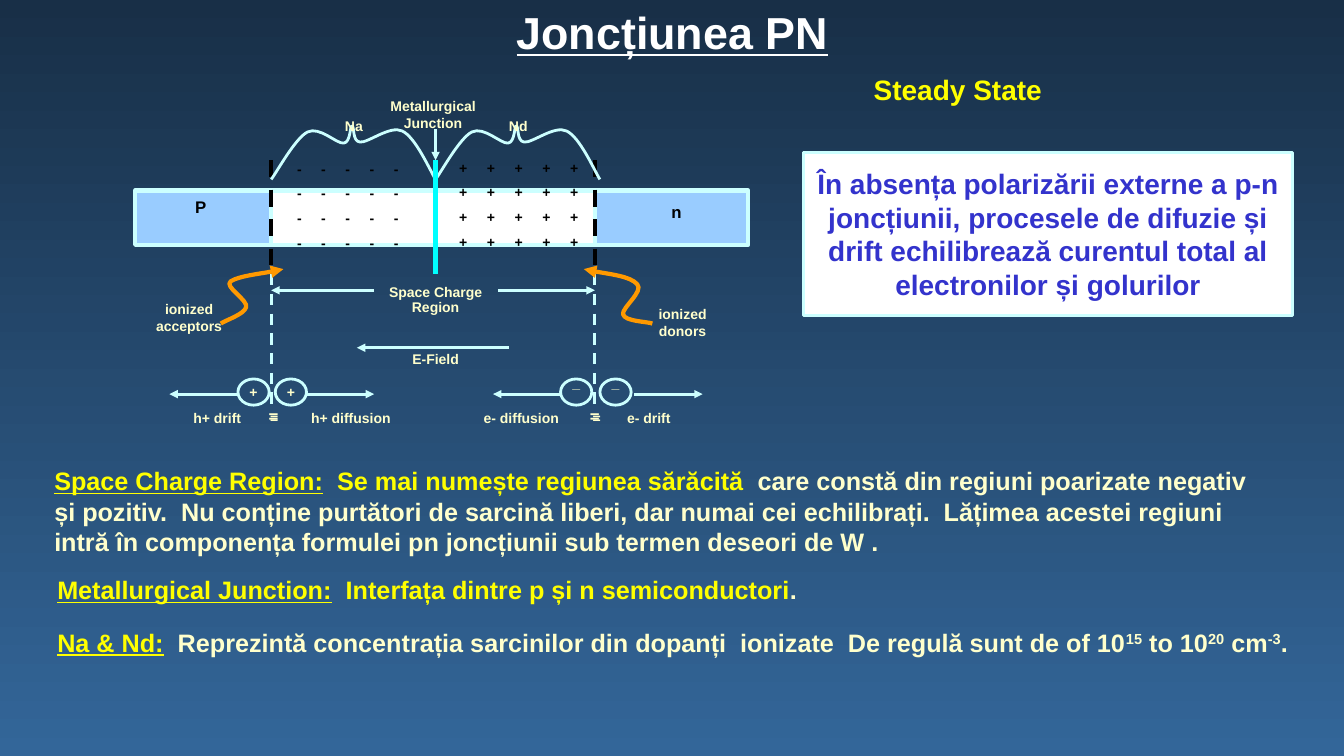
from dataclasses import dataclass

from lxml.etree import SubElement
from pptx import Presentation
from pptx.dml.color import RGBColor
from pptx.enum.dml import MSO_LINE
from pptx.enum.shapes import MSO_CONNECTOR, MSO_SHAPE
from pptx.enum.text import MSO_ANCHOR as Anchor, MSO_AUTO_SIZE, PP_ALIGN as Align
from pptx.oxml.ns import qn
from pptx.util import Emu, Pt


@dataclass(frozen=True)
class Theme:
    font: str = "Arial"
    white: str = "FFFFFF"
    black: str = "000000"
    yellow: str = "FFFF00"
    cream: str = "FFFFCC"
    ice: str = "CCFFFF"
    cyan: str = "00FFFF"
    sky: str = "99CCFF"
    indigo: str = "3333CC"
    orange: str = "FF9900"
    night: str = "182F47"
    sea: str = "336699"
    title: int = 32
    lead: int = 20
    body: int = 18
    region: int = 12
    label: int = 10
    thick: int = 3
    thin: int = 2


T = Theme()


def px(*values):
    return [Emu(v * 9144) for v in values]


def rgb(color):
    return RGBColor.from_string(color)


def style(p, size, color, align=Align.CENTER):
    p.alignment = align
    f = p.font
    f.name, f.size, f.bold = T.font, Pt(size), True
    f.color.rgb = rgb(color)


def set_margins(tf, left, top, right, bottom):
    tf.margin_left, tf.margin_top, tf.margin_right, tf.margin_bottom = px(left, top, right, bottom)


def add_text(shapes, box, text, size=T.label, color=T.cream, align=Align.CENTER):
    tf = shapes.add_textbox(*px(*box)).text_frame
    tf.word_wrap = True
    p = tf.paragraphs[0]
    p.text = text
    style(p, size, color, align)
    return tf


def set_line(line, color, width):
    line.color.rgb = rgb(color)
    line.width = Pt(width)


def add_arrowhead(sp):
    SubElement(sp.line._get_or_add_ln(), qn("a:tailEnd"), type="triangle")


def add_line(shapes, ends, color=T.ice, width=T.thin, dash=False, arrow=False):
    sp = shapes.add_connector(MSO_CONNECTOR.STRAIGHT, *px(*ends))
    SubElement(sp._element.spPr, qn("a:effectLst"))
    set_line(sp.line, color, width)
    if dash:
        sp.line.dash_style = MSO_LINE.DASH
    if arrow:
        add_arrowhead(sp)


def add_preset(shapes, kind, box, fill=None, width=T.thin):
    sp = shapes.add_shape(kind, *px(*box))
    sp.shadow.inherit = False
    if fill:
        sp.fill.solid()
        sp.fill.fore_color.rgb = rgb(fill)
    else:
        sp.fill.background()
    set_line(sp.line, T.ice, width)
    return sp


def add_curve(shapes, x, y, points, color, width):
    points = [(x + dx, y + dy) for dx, dy in points]
    builder = shapes.build_freeform(*points[0], scale=9144)
    builder.add_line_segments(points[1:], close=False)
    sp = builder.convert_to_shape()
    sp.shadow.inherit = False
    sp.fill.background()
    set_line(sp.line, color, width)
    outline = sp._element.spPr.find(".//" + qn("a:path"))
    steps = outline.findall(qn("a:lnTo"))
    for i in range(0, len(steps), 3):
        bezier = SubElement(outline, qn("a:cubicBezTo"))
        for step in steps[i:i + 3]:
            bezier.append(step[0])
            outline.remove(step)
    return sp


def add_charges(shapes, box, sign, left, right):
    tf = add_text(shapes, box, "", color=T.black)
    set_margins(tf, left, 5, right, 5)
    for row in range(4):
        p = tf.add_paragraph() if row else tf.paragraphs[0]
        style(p, T.label, T.black)
        if row:
            p.space_before = Pt(5.7)
        r = p.add_run()
        r.text = " ".join(sign * 5)
        r._r.get_or_add_rPr().set("spc", "560")


def add_carrier(shapes, x, y, sign):
    tf = add_preset(shapes, MSO_SHAPE.OVAL, (x, y, 31, 26)).text_frame
    tf.word_wrap = False
    minus = sign == "_"
    tf.vertical_anchor = Anchor.BOTTOM if minus else Anchor.MIDDLE
    set_margins(tf, 0, 0, 0, 10 if minus else 0)
    p = tf.paragraphs[0]
    p.text = sign
    style(p, T.label, T.cream)


def add_junction(shapes, x, y):
    left, middle, right = x + 135, x + 298, x + 456
    for start, end, fill in ((x, left, T.sky), (left, middle, T.white),
                             (middle, right, T.white), (right, x + 608, T.sky)):
        add_preset(shapes, MSO_SHAPE.RECTANGLE, (start, y + 97, end - start, 54), fill, T.thick)
    for edge in (left, right):
        add_line(shapes, (edge, y + 67, edge, y + 180), T.black, T.thick, dash=True)
        add_line(shapes, (edge, y + 180, edge, y + 309), dash=True)
    add_text(shapes, (x + 34, y + 98, 62, 37), "P", T.region, T.black)
    add_text(shapes, (x + 506, y + 103, 62, 37), "n", T.region, T.black)
    add_charges(shapes, (x + 141, y + 62, 152, 124), "-", 0, 12)
    add_charges(shapes, (x + 294, y + 61, 165, 124), "+", 8, 0)

    brace = [(0, 54), (6, 46), (24, 13), (36, 7), (48, 1), (65, 19), (72, 18), (79, 17),
             (78, 1), (80, 1), (83, 1), (80, 16), (88, 17), (96, 18), (118, 0),
             (130, 6), (143, 12), (157, 44), (163, 54)]
    for start, dopant in ((left, "Na"), (middle, "Nd")):
        add_curve(shapes, start, y + 32, brace, T.ice, T.thin)
        add_text(shapes, (start + 51, y + 20, 62, 33), dopant)

    add_line(shapes, (middle, y + 36, middle, y + 67), arrow=True)
    add_text(shapes, (x + 214, y, 163, 53), "Metallurgical Junction")
    add_line(shapes, (middle, y + 67, middle, y + 180), T.cyan, T.thick)

    for text, top, height in (("Space Charge Region", 186, 49), ("E-Field", 253, 31)):
        tf = add_text(shapes, (x + 225, y + top, 146, height), text)
        tf.paragraphs[0].line_spacing = 0.9
    for start, end, top in ((x + 237, left, 196), (x + 360, right, 196), (x + 371, x + 220, 253)):
        add_line(shapes, (start, y + top, end, y + top), arrow=True)

    acceptors = [(0, 54), (4, 51), (23, 45), (25, 38), (28, 31), (2, 17), (10, 12),
                 (18, 7), (51, 3), (62, 0)]
    donors = [(68, 54), (63, 52), (41, 52), (39, 45), (37, 39), (60, 22), (53, 15),
              (46, 7), (11, 3), (0, 0)]
    for start, points in ((x + 85, acceptors), (x + 445, donors)):
        add_arrowhead(add_curve(shapes, start, y + 175, points, T.orange, T.thick))
    add_text(shapes, (x, y + 201, 107, 53), "ionized acceptors")
    add_text(shapes, (x + 495, y + 206, 96, 53), "ionized donors")
    add_balance(shapes, x, y + 284)


def add_balance(shapes, x, y):
    for dx, sign in ((139, "+"), (102, "+"), (422, "_"), (461, "_")):
        add_carrier(shapes, x + dx, y, sign)
    for start, end in ((169, 237), (495, 563), (422, 355), (102, 34)):
        add_line(shapes, (x + start, y + 15, x + end, y + 15), arrow=True)
    for dx, width, text in ((28, 107, "h+ drift"), (152, 124, "h+ diffusion"),
                            (321, 124, "e- diffusion"), (456, 107, "e- drift"),
                            (124, 23, "="), (444, 23, "=")):
        add_text(shapes, (x + dx, y + 25, width, 33), text)
    for dx, align in ((114, Align.RIGHT), (437, Align.CENTER)):
        add_text(shapes, (x + dx, y + 22, 38, 37), "=", T.region, align=align)


def add_title(title, box):
    title.left, title.top, title.width, title.height = px(*box)
    tf = title.text_frame
    tf.auto_size = MSO_AUTO_SIZE.NONE
    tf.vertical_anchor = Anchor.TOP
    p = tf.paragraphs[0]
    p.text = "Joncțiunea PN"
    style(p, T.title, T.white)
    p.font.underline = True


def add_statement(shapes, box):
    tf = add_preset(shapes, MSO_SHAPE.RECTANGLE, box, T.white).text_frame
    tf.word_wrap = True
    tf.vertical_anchor = Anchor.MIDDLE
    p = tf.paragraphs[0]
    p.text = ("În absența polarizării externe a p-n joncțiunii, procesele de difuzie și "
              "drift echilibrează curentul total al electronilor și golurilor")
    style(p, T.lead, T.indigo)


def add_definition(shapes, box, term, key, rest):
    p = add_text(shapes, box, "", T.body, T.cream, Align.LEFT).paragraphs[0]
    for text, color, underline in ((term, T.yellow, True), (key, T.yellow, False)):
        r = p.add_run()
        r.text = text
        r.font.color.rgb = rgb(color)
        r.font.underline = underline
    for i, text in enumerate(rest):
        r = p.add_run()
        r.text = text
        if i % 2:
            r._r.get_or_add_rPr().set("baseline", "30000")


def main():
    prs = Presentation()
    prs.slide_width, prs.slide_height = px(1333, 750)
    s = prs.slides.add_slide(prs.slide_layouts[5])
    fill = s.background.fill
    fill.gradient()
    fill.gradient_angle = 270
    for stop, color in zip(fill.gradient_stops, (T.night, T.sea)):
        stop.color.rgb = rgb(color)
    add_title(s.shapes.title, (267, 0, 800, 63))
    add_text(s.shapes, (775, 67, 350, 43), "Steady State", T.lead, T.yellow)
    add_junction(s.shapes.add_group_shape().shapes, 134, 92)
    add_statement(s.shapes, (797, 151, 485, 162))
    add_definition(s.shapes, (44, 457, 1217, 101), "Space Charge Region:",
                   "  Se mai numește regiunea sărăcită  ",
                   ["care constă din regiuni poarizate negativ și pozitiv.  Nu conține purtători de "
                    "sarcină liberi, dar numai cei echilibrați.  Lățimea acestei regiuni intră în "
                    "componența formulei pn joncțiunii sub termen deseori de W ."])
    add_definition(s.shapes, (47, 565, 1197, 40), "Metallurgical Junction:",
                   "  Interfața dintre p și n semiconductori", ["."])
    add_definition(s.shapes, (47, 617, 1257, 40), "Na & Nd:", "  ",
                   ["Reprezintă concentrația sarcinilor din dopanți  ionizate  De regulă sunt de of 10",
                    "15", " to 10", "20", " cm", "-3", "."])
    prs.save("out.pptx")


if __name__ == "__main__":
    main()
